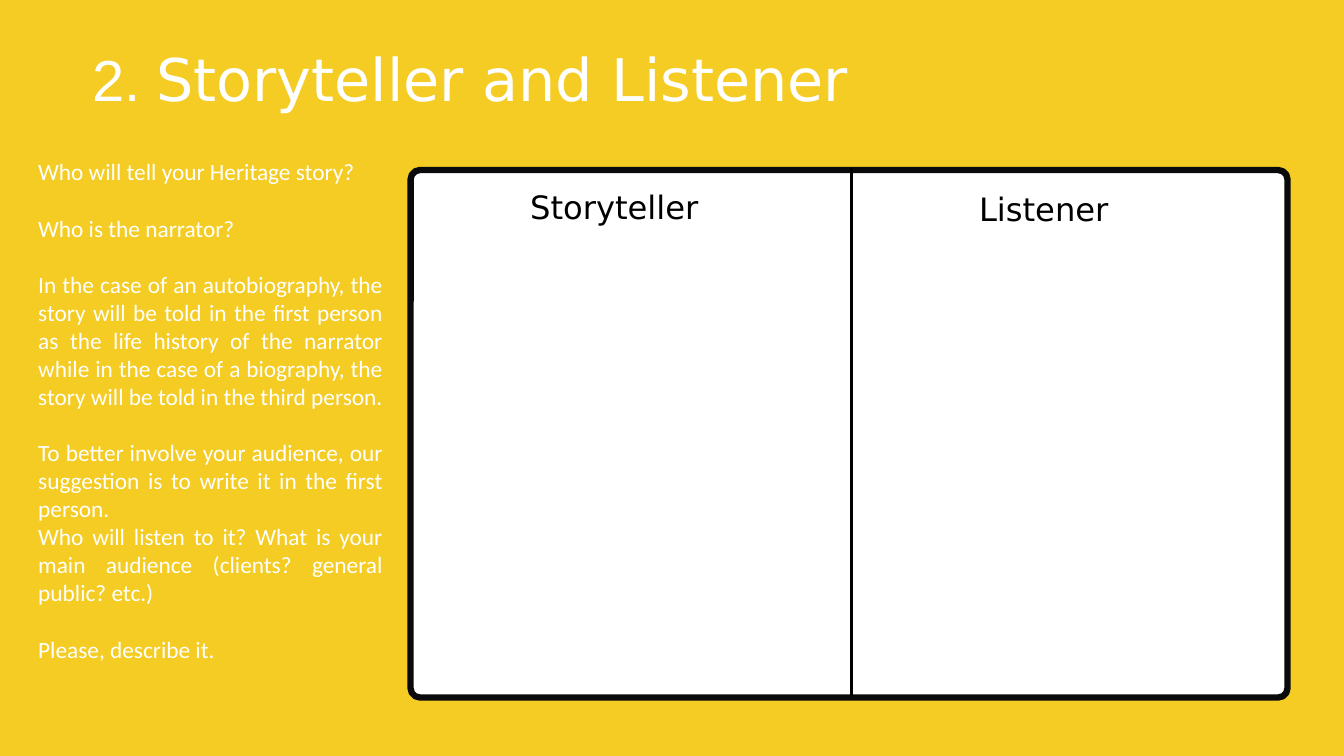
"""Builds the storyteller and listener worksheet slide."""
from lxml import etree
from pptx import Presentation
from pptx.dml.color import RGBColor
from pptx.enum.shapes import MSO_CONNECTOR, MSO_SHAPE
from pptx.enum.text import MSO_ANCHOR, MSO_AUTO_SIZE, PP_ALIGN
from pptx.oxml.ns import qn
from pptx.util import Inches, Pt

YELLOW = RGBColor(0xF4, 0xCC, 0x23)
WHITE = RGBColor(0xFF, 0xFF, 0xFF)
BLACK = RGBColor(0, 0, 0)
INK = RGBColor(0x0A, 0x0A, 0x0C)
LEFT, JUSTIFY = PP_ALIGN.LEFT, PP_ALIGN.JUSTIFY
TOP, FIXED = MSO_ANCHOR.TOP, MSO_AUTO_SIZE.NONE
ROUNDED, STRAIGHT = MSO_SHAPE.ROUNDED_RECTANGLE, MSO_CONNECTOR.STRAIGHT
HEAD, BODY, DIGIT = "DejaVu Sans", "Calibri", "Arial"
GAP = 30.5

LABELS = [("Storyteller", 7.89, 2.79, 2.59), ("Listener", 14.57, 2.82, 1.94)]
PROMPTS = [
    ("Who will tell your Heritage story?", GAP),
    ("Who is the narrator?", GAP),
    ("In the case of an autobiography, the story will be told in the first "
     "person as the life history of the narrator while in the case of a "
     "biography, the story will be told in the third person.", GAP),
    ("To better involve your audience, our suggestion is to write it in the "
     "first person.", 0),
    ("Who will listen to it? What is your main audience (clients? general "
     "public? etc.)", GAP),
    ("Please, describe it.", 0),
]


def write(para, text, font=HEAD, size=34.5, color=BLACK, align=LEFT, after=0):
    para.alignment = align
    para.space_before, para.space_after = Pt(0), Pt(after)
    run = para.add_run()
    run.text = text
    run.font.name, run.font.size = font, Pt(size)
    run.font.color.rgb = color


class Sheet:
    def __init__(self, deck):
        self.slide = deck.slides.add_slide(deck.slide_layouts[5])
        self.shapes = self.slide.shapes
        fill = self.slide.background.fill
        fill.solid()
        fill.fore_color.rgb = YELLOW

    def frame(self, shape, inset=0):
        frame = shape.text_frame
        frame.word_wrap, frame.auto_size = True, FIXED
        frame.vertical_anchor = TOP
        frame.margin_left = frame.margin_right = Inches(inset)
        frame.margin_top = frame.margin_bottom = Inches(inset)
        return frame

    def title(self, parts, x, y, w, h):
        box = self.shapes.title
        box.left, box.top = Inches(x), Inches(y)
        box.width, box.height = Inches(w), Inches(h)
        para = self.frame(box).paragraphs[0]
        for text, font, size in parts:
            write(para, text, font=font, size=size, color=WHITE)

    def text(self, lines, x, y, w, h, inset=0, **style):
        box = self.shapes.add_textbox(Inches(x), Inches(y), Inches(w), Inches(h))
        frame = self.frame(box, inset)
        for i, (line, after) in enumerate(lines):
            para = frame.add_paragraph() if i else frame.paragraphs[0]
            write(para, line, after=after, **style)

    def panel(self, x, y, w, h, radius, width):
        box = self.shapes.add_shape(ROUNDED, Inches(x), Inches(y), Inches(w), Inches(h))
        box.adjustments[0] = radius / min(w, h)
        box.shadow.inherit = False
        box.fill.solid()
        box.fill.fore_color.rgb = WHITE
        box.line.color.rgb, box.line.width = INK, Pt(width)

    def rule(self, x, top, end, width):
        line = self.shapes.add_connector(
            STRAIGHT, Inches(x), Inches(top), Inches(x), Inches(end))
        line.line.color.rgb, line.line.width = BLACK, Pt(width)
        etree.SubElement(line._element.spPr, qn("a:effectLst"))


def main():
    deck = Presentation()
    deck.slide_width, deck.slide_height = Inches(20), Inches(11.25)
    sheet = Sheet(deck)
    sheet.panel(6.11, 2.53, 13.05, 7.85, radius=0.14, width=6.8)
    sheet.rule(12.67, 2.5, 10.35, width=3.75)
    sheet.title([("2. ", DIGIT, 62), ("Storyteller and Listener", HEAD, 63)],
                1.37, 0.63, 12.79, 1.07)
    for label, x, y, w in LABELS:
        sheet.text([(label, 0)], x, y, w, 0.6)
    sheet.text(PROMPTS, 0.47, 2.24, 5.32, 8.62, inset=0.1,
               font=BODY, size=25, color=WHITE, align=JUSTIFY)
    deck.save("out.pptx")


if __name__ == "__main__":
    main()
